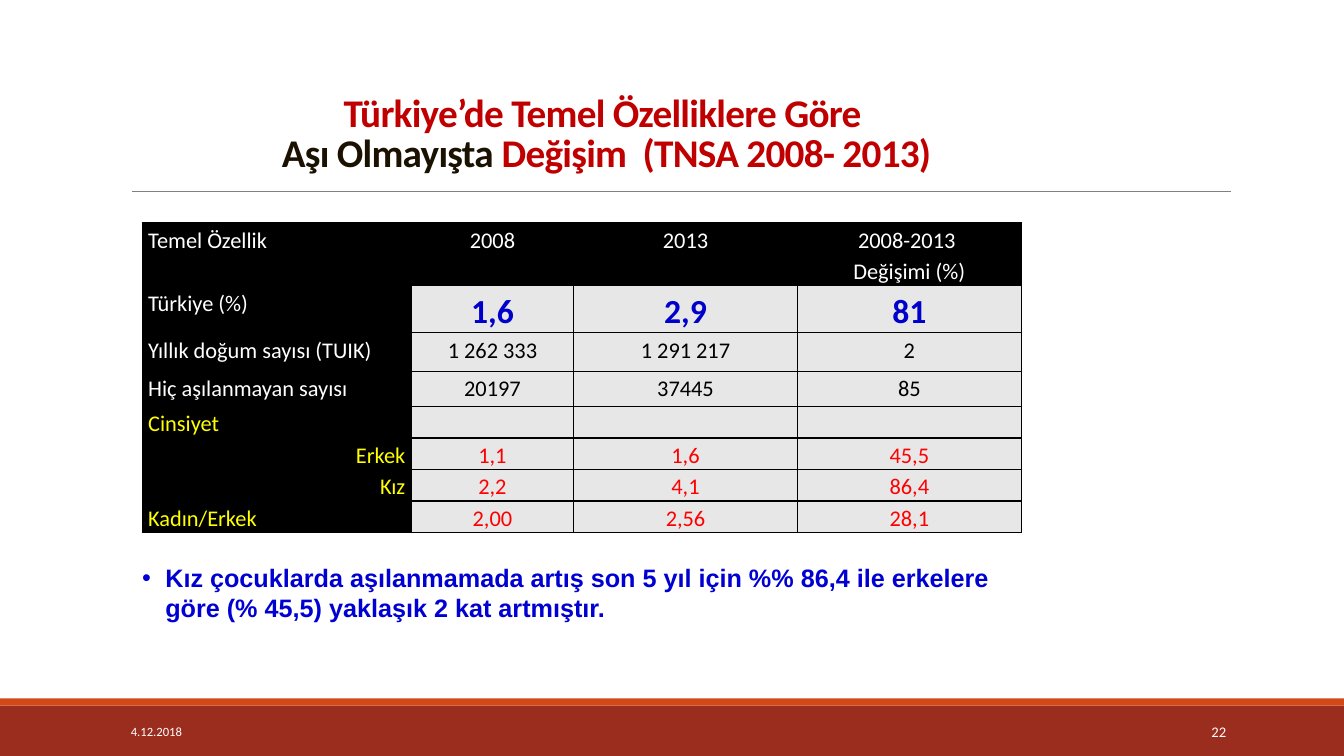
from lxml.etree import SubElement
from pptx import Presentation
from pptx.dml.color import RGBColor
from pptx.enum.shapes import MSO_CONNECTOR, MSO_SHAPE
from pptx.enum.text import MSO_ANCHOR, MSO_AUTO_SIZE, PP_ALIGN
from pptx.oxml.ns import qn
from pptx.util import Inches, Pt

BLACK = RGBColor(0x00, 0x00, 0x00)
WHITE = RGBColor(0xFF, 0xFF, 0xFF)
DARK_RED = RGBColor(0xC0, 0x00, 0x00)
DARK_BROWN = RGBColor(0x1A, 0x11, 0x00)
BRICK = RGBColor(0x9B, 0x2D, 0x1F)
ORANGE = RGBColor(0xD3, 0x48, 0x17)
RULE_GRAY = RGBColor(0x80, 0x80, 0x80)
CELL_GRAY = RGBColor(0xE7, 0xE7, 0xE7)
BLUE = RGBColor(0x00, 0x00, 0xCC)
BULLET_BLUE = RGBColor(0x00, 0x00, 0xD2)
YELLOW = RGBColor(0xFF, 0xFF, 0x00)
RED = RGBColor(0xFF, 0x00, 0x00)

# Content
TITLE_LINES = [
    [("Türkiye’de Temel Özelliklere Göre ", DARK_RED)],
    [("Aşı Olmayışta ", DARK_BROWN), ("Değişim  (TNSA 2008- 2013)", DARK_RED)],
]
TABLE_ROWS = [
    ("Temel Özellik", "2008", "2013", "2008-2013 \nDeğişimi (%)"),
    ("Türkiye (%)", "1,6", "2,9", "81"),
    ("Yıllık doğum sayısı (TUIK)", "1 262 333", "1 291 217", "2"),
    ("Hiç aşılanmayan sayısı", "20197", "37445", "85"),
    ("Cinsiyet", "", "", ""),
    ("Erkek", "1,1", "1,6", "45,5"),
    ("Kız", "2,2", "4,1", "86,4"),
    ("Kadın/Erkek", "2,00", "2,56", "28,1"),
]
COLUMN_WIDTHS = [2.67, 1.61, 2.22, 2.22]
ROW_HEIGHTS = [0.58, 0.44, 0.38, 0.35] + [0.29] * 4
HEADER_ROW, TOTAL_ROW, FIRST_GENDER_ROW = 0, 1, 4
INDENTED_LABELS = ("Erkek", "Kız")
BULLET = ("Kız çocuklarda aşılanmamada artış son 5 yıl için %% 86,4 ile erkelere "
          "göre (% 45,5) yaklaşık 2 kat artmıştır.")
BANDS = [(7, 0.5, BRICK), (6.93, 0.07, ORANGE)]
FOOTERS = [
    ("4.12.2018", 1.2, 2.7, 9, PP_ALIGN.LEFT),
    ("22", 10.83, 1.43, 10.5, PP_ALIGN.RIGHT),
]


def add_text(paragraph, text, size=16, color=BLACK, bold=False, font="Calibri",
             align=None, line_spacing=None, tracking=None):
    run = paragraph.add_run()
    run.text = text
    run.font.name = font
    run.font.size = Pt(size)
    run.font.bold = bold
    run.font.color.rgb = color
    if align is not None:
        paragraph.alignment = align
    if line_spacing is not None:
        paragraph.line_spacing = line_spacing
    if tracking is not None:
        run.font._element.set("spc", str(int(tracking * 100)))


def place(shape, left, top, width, height):
    shape.left, shape.top = Inches(left), Inches(top)
    shape.width, shape.height = Inches(width), Inches(height)


def set_borders(cell, color, width):
    properties = cell._tc.get_or_add_tcPr()
    for position, side in enumerate(("lnL", "lnR", "lnT", "lnB")):
        line = SubElement(properties, qn("a:" + side), w=str(Pt(width)))
        fill = SubElement(line, qn("a:solidFill"))
        SubElement(fill, qn("a:srgbClr"), val=str(color))
        properties.remove(line)
        properties.insert(position, line)


def cell_format(row, column, text):
    """Return fill and text format for one table cell."""
    if row == HEADER_ROW or column == 0:
        color = YELLOW if row >= FIRST_GENDER_ROW else WHITE
        align = PP_ALIGN.CENTER if column else PP_ALIGN.LEFT
        if text in INDENTED_LABELS:
            align = PP_ALIGN.RIGHT
        return BLACK, dict(color=color, align=align)
    if row == TOTAL_ROW:
        return CELL_GRAY, dict(color=BLUE, size=24, bold=True, align=PP_ALIGN.CENTER)
    color = RED if row >= FIRST_GENDER_ROW else BLACK
    return CELL_GRAY, dict(color=color, align=PP_ALIGN.CENTER)


presentation = Presentation()
presentation.slide_width, presentation.slide_height = Inches(13.33), Inches(7.5)
slide = presentation.slides.add_slide(presentation.slide_layouts[1])

# Bottom bands and title rule
for top, height, color in BANDS:
    band = slide.shapes.add_shape(MSO_SHAPE.RECTANGLE, 0, Inches(top),
                                  presentation.slide_width, Inches(height))
    band.shadow.inherit = False
    band.fill.solid()
    band.fill.fore_color.rgb = color
    band.line.fill.background()

rule = slide.shapes.add_connector(MSO_CONNECTOR.STRAIGHT, Inches(1.31), Inches(1.9),
                                  Inches(12.21), Inches(1.9))
rule.line.color.rgb = RULE_GRAY
rule.line.width = Pt(0.5)
SubElement(rule._element.spPr, qn("a:effectLst"))

# Title
title = slide.shapes.title
place(title, 1.41, 0.72, 9.21, 1.07)
title.text_frame.vertical_anchor = MSO_ANCHOR.BOTTOM
title.text_frame.auto_size = MSO_AUTO_SIZE.NONE
title_paragraph = title.text_frame.paragraphs[0]
for number, line_parts in enumerate(TITLE_LINES):
    if number:
        title_paragraph.add_line_break()
    for text, color in line_parts:
        add_text(title_paragraph, text, size=28, color=color, bold=True,
                 align=PP_ALIGN.CENTER, line_spacing=0.85, tracking=-0.5)

# Table
table = slide.shapes.add_table(
    len(TABLE_ROWS), len(COLUMN_WIDTHS), Inches(1.41), Inches(2.21),
    Inches(sum(COLUMN_WIDTHS)), Inches(sum(ROW_HEIGHTS))).table
for column, width in zip(table.columns, COLUMN_WIDTHS):
    column.width = Inches(width)
for row, height in zip(table.rows, ROW_HEIGHTS):
    row.height = Inches(height)
for row_number, values in enumerate(TABLE_ROWS):
    for column_number, value in enumerate(values):
        cell = table.cell(row_number, column_number)
        fill_color, text_format = cell_format(row_number, column_number, value)
        cell.fill.solid()
        cell.fill.fore_color.rgb = fill_color
        cell.margin_left = cell.margin_right = Inches(0.06)
        cell.margin_top = cell.margin_bottom = 0
        set_borders(cell, BLACK, 1)
        for number, line in enumerate(value.split("\n") if value else []):
            frame = cell.text_frame
            paragraph = frame.add_paragraph() if number else frame.paragraphs[0]
            add_text(paragraph, line, line_spacing=1.15, **text_format)

# Bulleted conclusion
body = slide.placeholders[1]
place(body, 1.31, 5.53, 8.83, 1.31)
body.text_frame.auto_size = MSO_AUTO_SIZE.NONE
conclusion = body.text_frame.paragraphs[0]
conclusion.space_before = Pt(0)
add_text(conclusion, BULLET, size=18, color=BULLET_BLUE, bold=True, font="Arial")
bullet_properties = conclusion._p.get_or_add_pPr()
bullet_properties.set("marL", str(Inches(0.23)))
bullet_properties.set("indent", str(-Inches(0.23)))
SubElement(bullet_properties, qn("a:buFont"), typeface="Arial")
SubElement(bullet_properties, qn("a:buChar"), char="•")

# Date and page number
for text, left, width, size, align in FOOTERS:
    footer = slide.shapes.add_textbox(Inches(left), Inches(7.06), Inches(width), Inches(0.4))
    footer.text_frame.word_wrap = True
    footer.text_frame.vertical_anchor = MSO_ANCHOR.MIDDLE
    add_text(footer.text_frame.paragraphs[0], text, size=size, color=WHITE, align=align)

presentation.save("out.pptx")
